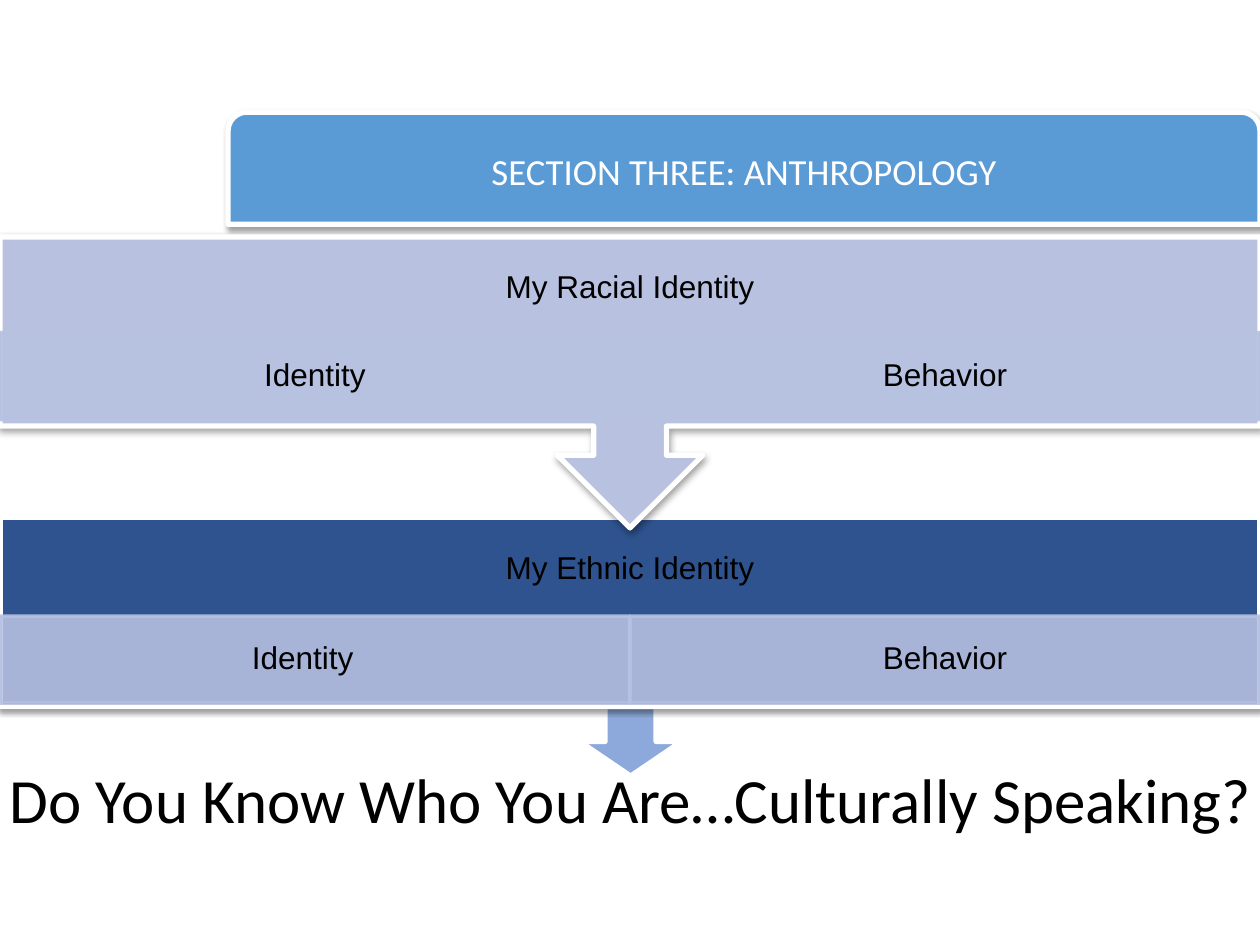
from dataclasses import dataclass

from lxml.etree import SubElement
from pptx import Presentation
from pptx.dml.color import RGBColor
from pptx.enum.shapes import MSO_SHAPE
from pptx.enum.text import MSO_ANCHOR, PP_ALIGN
from pptx.oxml.ns import qn
from pptx.util import Inches, Pt

PAGE_WIDTH, PAGE_HEIGHT = 10, 7.5
HEADING_HEIGHT, CELL_HEIGHT = 0.81, 0.69
WHITE, BLACK, PALE_BLUE = "FFFFFF", "000000", "B7C1E1"


@dataclass
class Frame:
    left: float
    top: float
    width: float
    height: float

    def lengths(self) -> tuple:
        return tuple(Inches(n) for n in (self.left, self.top, self.width, self.height))


@dataclass
class Label:
    text: str
    size: float = 18
    font: str = "Arial"
    color: str = BLACK
    margins: tuple[float, float] = (0.14, 0.14)
    spacing: float = 0.9


@dataclass
class Band:
    heading: str
    cells: tuple[str, str]
    top: float
    height: float
    cell_top: float
    kind: MSO_SHAPE
    fill: str
    adjustments: tuple = ()
    rotation: float = 0


def color(value: str) -> RGBColor:
    return RGBColor.from_string(value)


def write(shape, label: Label) -> None:
    frame = shape.text_frame
    frame.word_wrap = True
    frame.vertical_anchor = MSO_ANCHOR.MIDDLE
    side, end = (Inches(margin) for margin in label.margins)
    frame.margin_left = frame.margin_right = side
    frame.margin_top = frame.margin_bottom = end
    para = frame.paragraphs[0]
    para.text = label.text
    para.alignment = PP_ALIGN.CENTER
    para.line_spacing = label.spacing
    para.font.size = Pt(label.size)
    para.font.name = label.font
    para.font.color.rgb = color(label.color)


def add_text(page, frame: Frame, label: Label) -> None:
    write(page.shapes.add_textbox(*frame.lengths()), label)


def add_block(page, kind: MSO_SHAPE, frame: Frame, fill: str, line: str = WHITE,
              line_width: float = 3, adjustments: tuple = ()):
    block = page.shapes.add_shape(kind, *frame.lengths())
    block.shadow.inherit = False
    block.fill.solid()
    block.fill.fore_color.rgb = color(fill)
    block.line.color.rgb = color(line)
    block.line.width = Pt(line_width)
    for index, value in enumerate(adjustments):
        block.adjustments[index] = value
    return block


def add_shadow(shape) -> None:
    effects = shape._element.spPr.find(qn("a:effectLst"))
    shadow = SubElement(effects, qn("a:outerShdw"), blurRad=str(Pt(3.1)),
                        dist=str(Pt(1.6)), dir="5400000", rotWithShape="0")
    tint = SubElement(shadow, qn("a:srgbClr"), val=BLACK)
    SubElement(tint, qn("a:alpha"), val="37000")


def add_cell(page, frame: Frame, text: str) -> None:
    cell = add_block(page, MSO_SHAPE.RECTANGLE, frame, PALE_BLUE, PALE_BLUE, 2)
    for tint in cell._element.spPr.iter(qn("a:srgbClr")):
        SubElement(tint, qn("a:alpha"), val="89000")
    write(cell, Label(text, margins=(0.14, 0.02)))


def add_band(page, band: Band) -> None:
    block = add_block(page, band.kind, Frame(0, band.top, PAGE_WIDTH, band.height),
                      band.fill, adjustments=band.adjustments)
    block.rotation = band.rotation
    add_shadow(block)
    add_text(page, Frame(0, band.top, PAGE_WIDTH, HEADING_HEIGHT), Label(band.heading))
    width = PAGE_WIDTH / len(band.cells)
    for column, text in enumerate(band.cells):
        add_cell(page, Frame(column * width, band.cell_top, width, CELL_HEIGHT), text)


BANDS = (
    Band("My Ethnic Identity", ("Identity\t", "Behavior"), 4.11, 1.5, 4.89,
         MSO_SHAPE.RECTANGLE, "2E538F"),
    Band("My Racial Identity", ("Identity", "Behavior"), 1.88, 2.31, 2.64,
         MSO_SHAPE.UP_ARROW_CALLOUT, "B8C2E0", (0.25, 0.25, 0.25, 0.65), 180),
)


def main() -> None:
    """Build the cultural identity slide."""
    deck = Presentation()
    deck.slide_width, deck.slide_height = Inches(PAGE_WIDTH), Inches(PAGE_HEIGHT)
    page = deck.slides.add_slide(deck.slide_layouts[6])
    add_block(page, MSO_SHAPE.DOWN_ARROW, Frame(4.6, 5.61, 0.81, 0.55), "8DA9DB")
    section = add_block(page, MSO_SHAPE.ROUND_2_SAME_RECTANGLE,
                        Frame(1.81, 0.89, 8.19, 0.89), "5B9BD5", adjustments=(0.167, 0))
    add_shadow(section)
    write(section, Label("SECTION THREE: ANTHROPOLOGY", 21, "Calibri", WHITE, (0.1, 0.05), 1))
    add_text(page, Frame(-0.16, 5.53, 10.33, 1.61),
             Label("Do You Know Who You Are…Culturally Speaking?", 36, "Calibri",
                   margins=(0.1, 0.1), spacing=1))
    for band in BANDS:
        add_band(page, band)
    deck.save("out.pptx")


if __name__ == "__main__":
    main()
